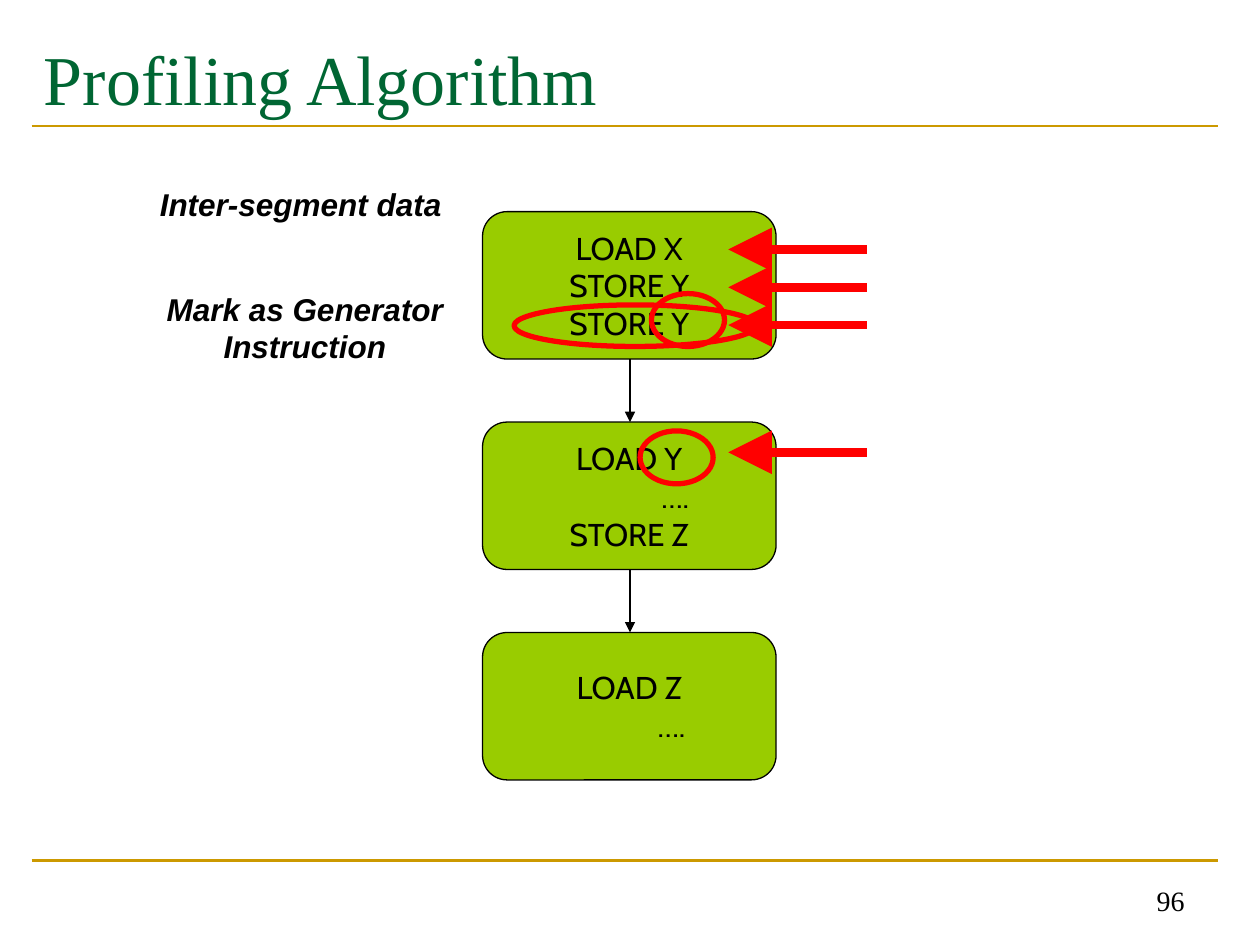
from lxml import etree
from pptx import Presentation
from pptx.dml.color import RGBColor
from pptx.enum.shapes import MSO_CONNECTOR, MSO_SHAPE
from pptx.enum.text import MSO_ANCHOR, PP_ALIGN
from pptx.oxml.ns import qn
from pptx.util import Inches, Pt

BLACK = RGBColor(0x00, 0x00, 0x00)
RED = RGBColor(0xFF, 0x00, 0x00)
GOLD = RGBColor(0xCC, 0x99, 0x00)
LIME = RGBColor(0x99, 0xCC, 0x00)
GREEN = RGBColor(0x00, 0x66, 0x33)
STRAIGHT = MSO_CONNECTOR.STRAIGHT
ROUND_RECT, OVAL = MSO_SHAPE.ROUNDED_RECTANGLE, MSO_SHAPE.OVAL
TOP, MIDDLE, BOTTOM = MSO_ANCHOR.TOP, MSO_ANCHOR.MIDDLE, MSO_ANCHOR.BOTTOM
LEFT, CENTER, RIGHT = PP_ALIGN.LEFT, PP_ALIGN.CENTER, PP_ALIGN.RIGHT

TITLE = {"name": "Times New Roman", "size": Pt(40)}
NUMBER = {"name": "Times New Roman", "size": Pt(16)}
CODE = {"name": "Cabin", "size": Pt(18)}
NOTE = {"name": "Arial", "size": Pt(18), "bold": True, "italic": True}

BOX_X, BOX_Y, BOX_W, BOX_H, BOX_STEP = 3.83, 1.68, 2.33, 1.17, 1.67
DOTS = "…."
SEGMENTS = [
    (["LOAD X", "STORE Y", "STORE Y"], 0),
    (["LOAD Y", DOTS, "STORE Z"], 0.73),
    (["LOAD Z", DOTS], 0.67),
]


def write(tf, lines, fmt, color=BLACK, align=LEFT, anchor=TOP, dots_indent=0):
    """Fill a text frame with one paragraph per line."""
    tf.word_wrap = True
    tf.vertical_anchor = anchor
    for i, line in enumerate(lines):
        p = tf.paragraphs[0] if i == 0 else tf.add_paragraph()
        p.alignment = align
        if line == DOTS:
            p._p.get_or_add_pPr().set("marL", str(Inches(dots_indent)))
        r = p.add_run()
        r.text = line
        for key, value in fmt.items():
            setattr(r.font, key, value)
        r.font.color.rgb = color


def add_text(s, box, text, fmt, **options):
    """Add a text box and return its text frame."""
    tf = s.shapes.add_textbox(*map(Inches, box)).text_frame
    write(tf, [text], fmt, **options)
    return tf


def add_line(s, start, end, color, width, head=None):
    """Add a straight line, with an arrowhead of the given size if any."""
    c = s.shapes.add_connector(STRAIGHT, *map(Inches, start + end))
    c.line.color.rgb = color
    c.line.width = Pt(width)
    if head:
        etree.SubElement(c.line._get_or_add_ln(), qn("a:tailEnd"),
                         type="triangle", w=head, len=head)
    etree.SubElement(c._element.spPr, qn("a:effectLst"))


def add_outline(s, kind, box, color, width):
    """Add an unfilled shape with a coloured outline."""
    sp = s.shapes.add_shape(kind, *map(Inches, box))
    sp.shadow.inherit = False
    sp.fill.background()
    sp.line.color.rgb = color
    sp.line.width = Pt(width)
    return sp


def add_segment(s, top, lines, dots_indent):
    """Add one code segment box."""
    sp = add_outline(s, ROUND_RECT, (BOX_X, top, BOX_W, BOX_H), BLACK, 0.75)
    sp.fill.solid()
    sp.fill.fore_color.rgb = LIME
    write(sp.text_frame, lines, CODE, align=CENTER, anchor=MIDDLE,
          dots_indent=dots_indent)


def main():
    """Build the slide and save it."""
    prs = Presentation()
    prs.slide_width, prs.slide_height = Inches(10), Inches(7.5)
    s = prs.slides.add_slide(prs.slide_layouts[6])

    for y in (6.83, 1):
        add_line(s, (0.25, y), (9.67, y), GOLD, 1.5)
    add_text(s, (7.17, 6.83, 2.33, 0.5), "96", NUMBER,
             align=RIGHT, anchor=BOTTOM)
    tf = add_text(s, (0.25, 0.17, 9.42, 1.17), "Profiling Algorithm", TITLE,
                  color=GREEN)
    tf.margin_top = Inches(0.11)

    tops = [BOX_Y + i * BOX_STEP for i in range(len(SEGMENTS))]
    for top, (lines, dots_indent) in zip(tops, SEGMENTS):
        add_segment(s, top, lines, dots_indent)
    for top, below in zip(tops, tops[1:]):
        add_line(s, (5, top + BOX_H), (5, below), BLACK, 0.75, "med")
    for y in (1.98, 2.28, 2.58, 3.59):
        add_line(s, (6.88, y), (5.78, y), RED, 5, "lg")

    for box in ((4.08, 2.42, 1.92, 0.33), (5.17, 2.33, 0.58, 0.42),
                (5.08, 3.42, 0.58, 0.42)):
        add_outline(s, OVAL, box, RED, 3)
    add_text(s, (1.17, 2.25, 2.5, 0.7), "Mark as Generator Instruction", NOTE,
             align=CENTER)
    add_text(s, (1.17, 1.42, 2.5, 0.4), "Inter-segment data", NOTE)

    prs.save("out.pptx")


if __name__ == "__main__":
    main()
